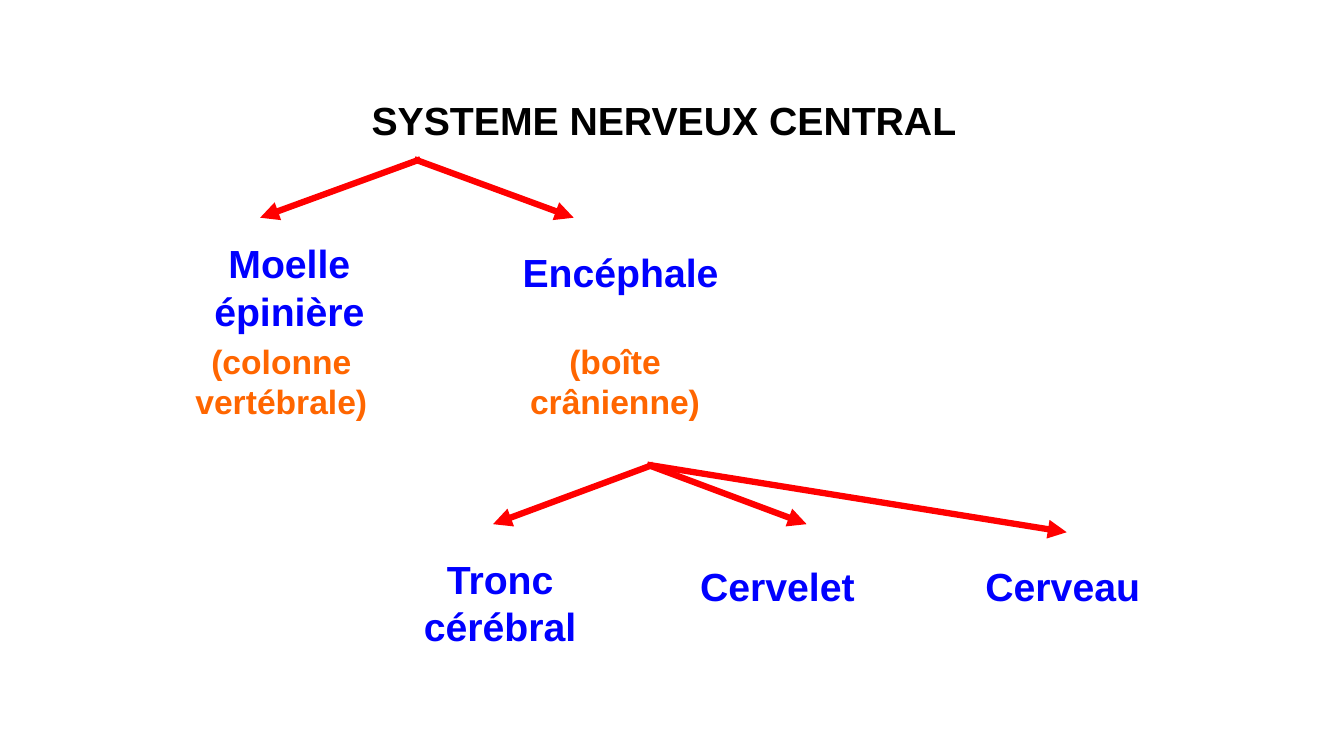
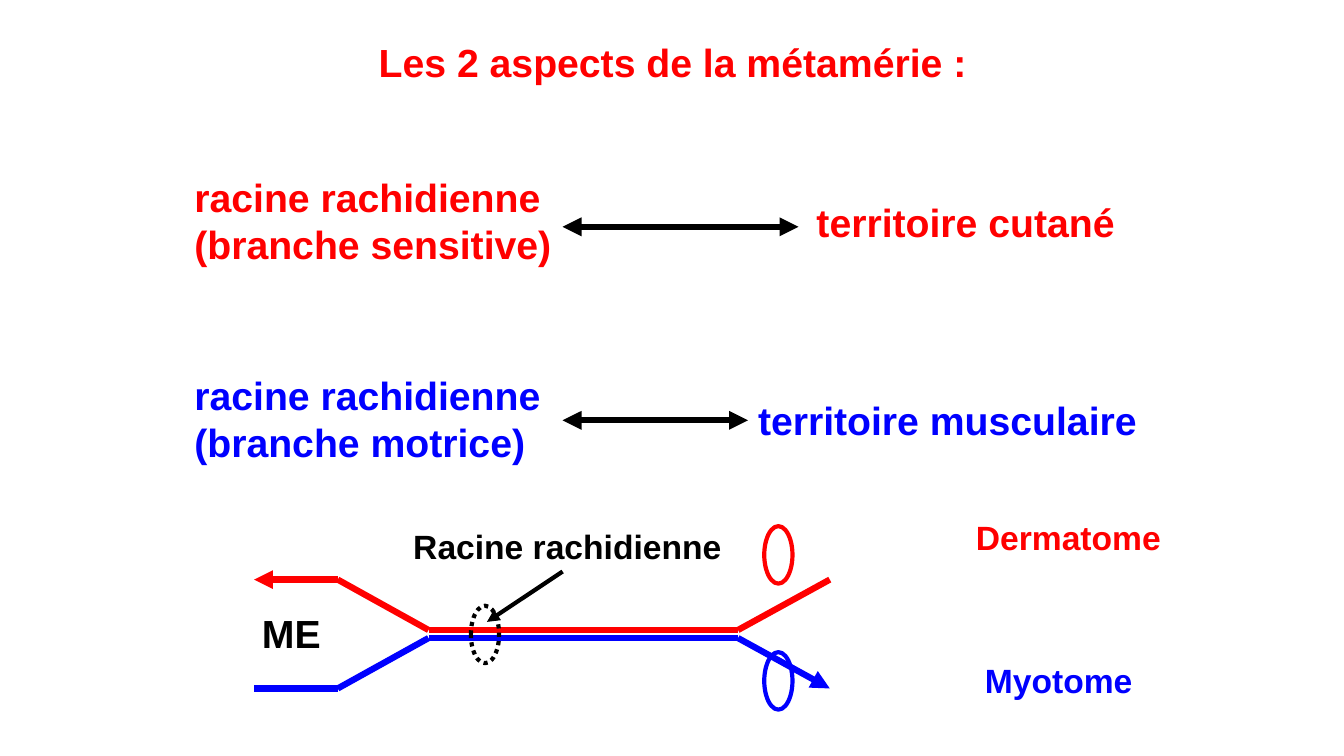
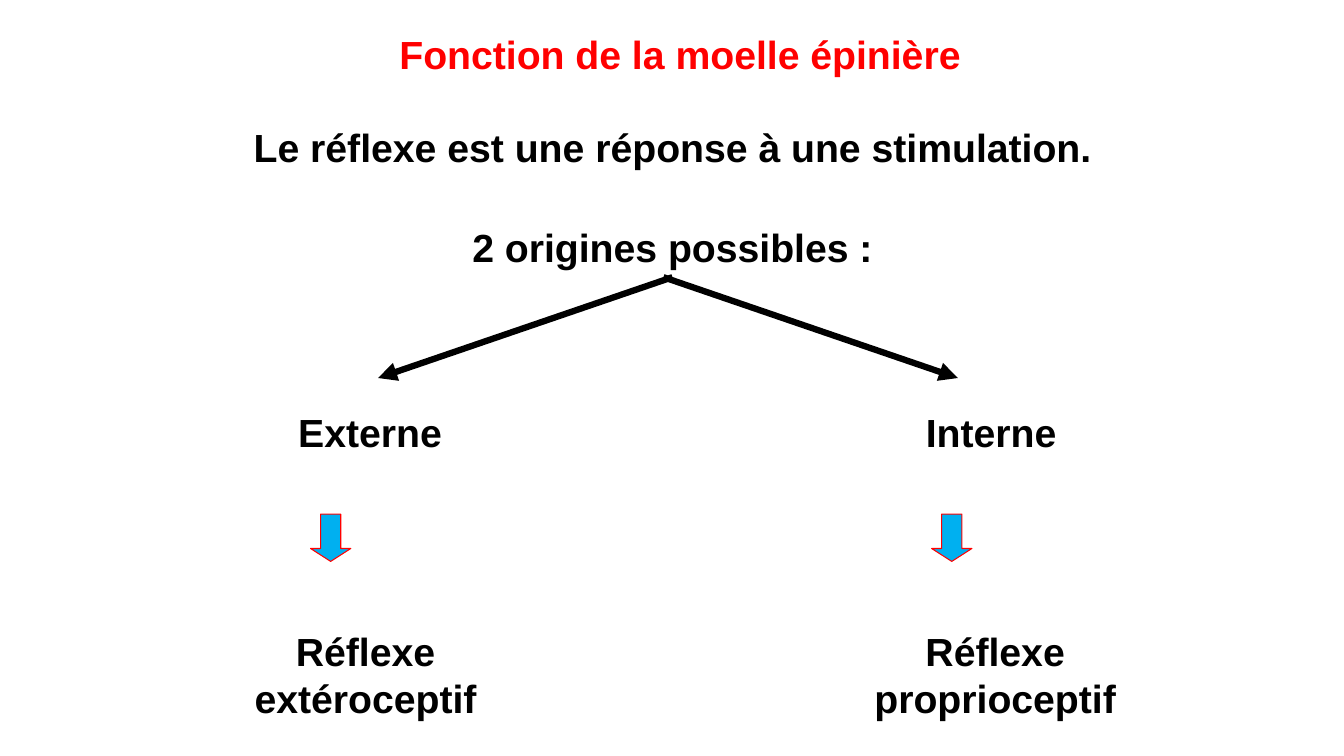
"""Build three slides on the nervous system."""
from lxml import etree
from pptx import Presentation, util as u
from pptx.dml.color import RGBColor
from pptx.enum import dml, shapes, text
from pptx.oxml import ns

PX = 9144
INK = {"black": "000000", "red": "FF0000", "blue": "0000FF",
       "orange": "FF6600", "sky": "00B0F0"}
FONT = {"name": "Arial", "bold": True}
FRAME = {"word_wrap": True, "vertical_anchor": text.MSO_ANCHOR.TOP,
         "auto_size": text.MSO_AUTO_SIZE.SHAPE_TO_FIT_TEXT}
MID = text.PP_ALIGN.CENTER
LEFT = text.PP_ALIGN.LEFT


def rgb(hue):
    """Return the named colour."""
    return RGBColor.from_string(INK[hue])


def apply(obj, vals):
    """Set each attribute of a format dict."""
    for key, val in vals.items():
        setattr(obj, key, val)


def add(node, tag, **vals):
    """Append a drawing element with its attributes."""
    return etree.SubElement(node, ns.qn(tag), **vals)


def write(shape, words, hue, size, align):
    """Put styled text in a shape."""
    frame = shape.text_frame
    frame.text = words
    apply(frame, FRAME)
    para = frame.paragraphs[0]
    para.alignment = align
    gap = add(para._p.get_or_add_pPr(), "a:spcBef")
    add(gap, "a:spcPct", val="50000")
    font = para.runs[0].font
    apply(font, {**FONT, "size": u.Pt(size)})
    font.color.rgb = rgb(hue)


def label(slide, words, x, y, wide, hue="black", size=28, align=MID, high=57):
    """Add a text box."""
    box = slide.shapes.add_textbox(x * PX, y * PX, wide * PX, high * PX)
    write(box, words, hue, size, align)


def page(deck, words, x, y, wide, hue):
    """Add a slide with its title placed."""
    slide = deck.slides.add_slide(deck.slide_layouts[5])
    head = slide.shapes.title
    apply(head, {"left": x * PX, "top": y * PX,
                 "width": wide * PX, "height": 57 * PX})
    write(head, words, hue, 28, MID)
    return slide


def line(slide, start, end, hue, ends=(), width=4.5):
    """Draw a line with triangles at the named ends."""
    spots = [v * PX for v in (*start, *end)]
    link = slide.shapes.add_connector(shapes.MSO_CONNECTOR.STRAIGHT, *spots)
    link.line.color.rgb = rgb(hue)
    link.line.width = u.Pt(width)
    props = link._element.spPr
    for end_tag in ends:
        add(props.find(ns.qn("a:ln")), f"a:{end_tag}End", type="triangle")
    add(props, "a:effectLst")


def shape(slide, kind, x, y, wide, high, hue, width, fill=None):
    """Add an outlined preset shape."""
    item = slide.shapes.add_shape(kind, x * PX, y * PX, wide * PX, high * PX)
    item.shadow.inherit = False
    item.line.color.rgb = rgb(hue)
    item.line.width = u.Pt(width)
    if fill:
        item.fill.solid()
        item.fill.fore_color.rgb = rgb(fill)
    else:
        item.fill.background()
    return item


def ring(slide, x, y, hue):
    """Draw a narrow open ellipse."""
    return shape(slide, shapes.MSO_SHAPE.OVAL, x, y, 28, 57, hue, 3)


def fork(slide, x, y, legs, hue, lap=6):
    """Draw arrows from one apex, left legs lapping right ones."""
    for dx, dy in legs:
        start = x + lap if dx < 0 else x
        line(slide, (start, y), (x + dx, y + dy), hue, ["tail"])


def root(slide, x, y, words, goal, goal_x, wide, hue):
    """Link a nerve root with its territory."""
    label(slide, words, x, y, 383, hue, align=LEFT, high=103)
    label(slide, goal, x + goal_x, y + 25, wide, hue, align=LEFT)


def nerve(slide, x, y, dip, hue, tips):
    """Draw a nerve as a chain that dips toward its middle."""
    spots = [(x, y), (x + 83, y), (x + 173, y + dip),
             (x + 480, y + dip), (x + 571, y)]
    for pos, pair in enumerate(zip(spots, spots[1:])):
        line(slide, *pair, hue, tips.get(pos, ()))


def reflex(slide, x, y, origin, words, wide, shift):
    """Stack an origin, a block arrow and its reflex."""
    label(slide, origin, x, y, 200)
    arrow = shape(slide, shapes.MSO_SHAPE.DOWN_ARROW,
                  x + 41, y + 110, 40, 47, "red", 0.75, "sky")
    arrow.adjustments[0] = 0.5
    arrow.adjustments[1] = 0.32
    label(slide, words, x + shift, y + 217, wide, high=103)


def system(deck):
    """Build the tree of the central nervous system."""
    slide = page(deck, "SYSTEME NERVEUX CENTRAL", 225, 91, 867, "black")
    fork(slide, 411, 158, [(-153, 58), (158, 58)], "red")
    fork(slide, 642, 461, [(-153, 59), (158, 59), (416, 67)], "red")
    for words, x, y, wide in (
            ("Moelle épinière", 183, 233, 208), ("Encéphale", 501, 241, 229),
            ("Tronc cérébral", 392, 546, 208), ("Cervelet", 667, 553, 208),
            ("Cerveau", 950, 553, 208)):
        label(slide, words, x, y, wide, "blue")
    for words, x in (("(colonne vertébrale)", 175), ("(boîte crânienne)", 506)):
        label(slide, words, x, 333, 208, "orange", 24, high=91)


def aspects(deck):
    """Build the two aspects of metamerism."""
    slide = page(deck, "Les 2 aspects de la métamérie :", 192, 33, 950, "red")
    root(slide, 183, 167, "racine rachidienne (branche sensitive)",
         "territoire cutané", 617, 330, "red")
    root(slide, 183, 363, "racine rachidienne (branche motrice)",
         "territoire musculaire", 559, 417, "blue")
    for y, end in ((225, 792), (417, 742)):
        line(slide, (558, y), (end, y), "black", ["head", "tail"])
    nerve(slide, 252, 575, 50, "red", {0: ["head"]})
    nerve(slide, 252, 683, -50, "blue", {3: ["tail"]})
    ring(slide, 758, 522, "red")
    ring(slide, 758, 647, "blue")
    ring(slide, 467, 601, "black").line.dash_style = dml.MSO_LINE.ROUND_DOT
    line(slide, (558, 567), (483, 617), "black", ["tail"], 3)
    label(slide, "ME", 250, 600, 100, align=LEFT)
    for words, x, y, wide, hue in (
            ("Dermatome", 958, 508, 208, "red"),
            ("Myotome", 967, 650, 167, "blue"),
            ("Racine rachidienne", 400, 517, 342, "black")):
        label(slide, words, x, y, wide, hue, 24, LEFT, 50)


def cord(deck):
    """Build the function of the spinal cord."""
    slide = page(deck, "Fonction de la moelle épinière", 183, 25, 983, "red")
    label(slide, "Le réflexe est une réponse à une stimulation.", 167, 117, 1000)
    label(slide, "2 origines possibles :", 167, 217, 1000)
    fork(slide, 658, 275, [(-283, 100), (292, 100)], "black", 9)
    reflex(slide, 267, 400, "Externe", "Réflexe extéroceptif", 275, -42)
    reflex(slide, 883, 400, "Interne", "Réflexe proprioceptif", 308, -50)


def main():
    """Make and save the deck."""
    deck = Presentation()
    apply(deck, {"slide_width": 1333 * PX, "slide_height": 750 * PX})
    for build in (system, aspects, cord):
        build(deck)
    deck.save("out.pptx")


if __name__ == "__main__":
    main()
